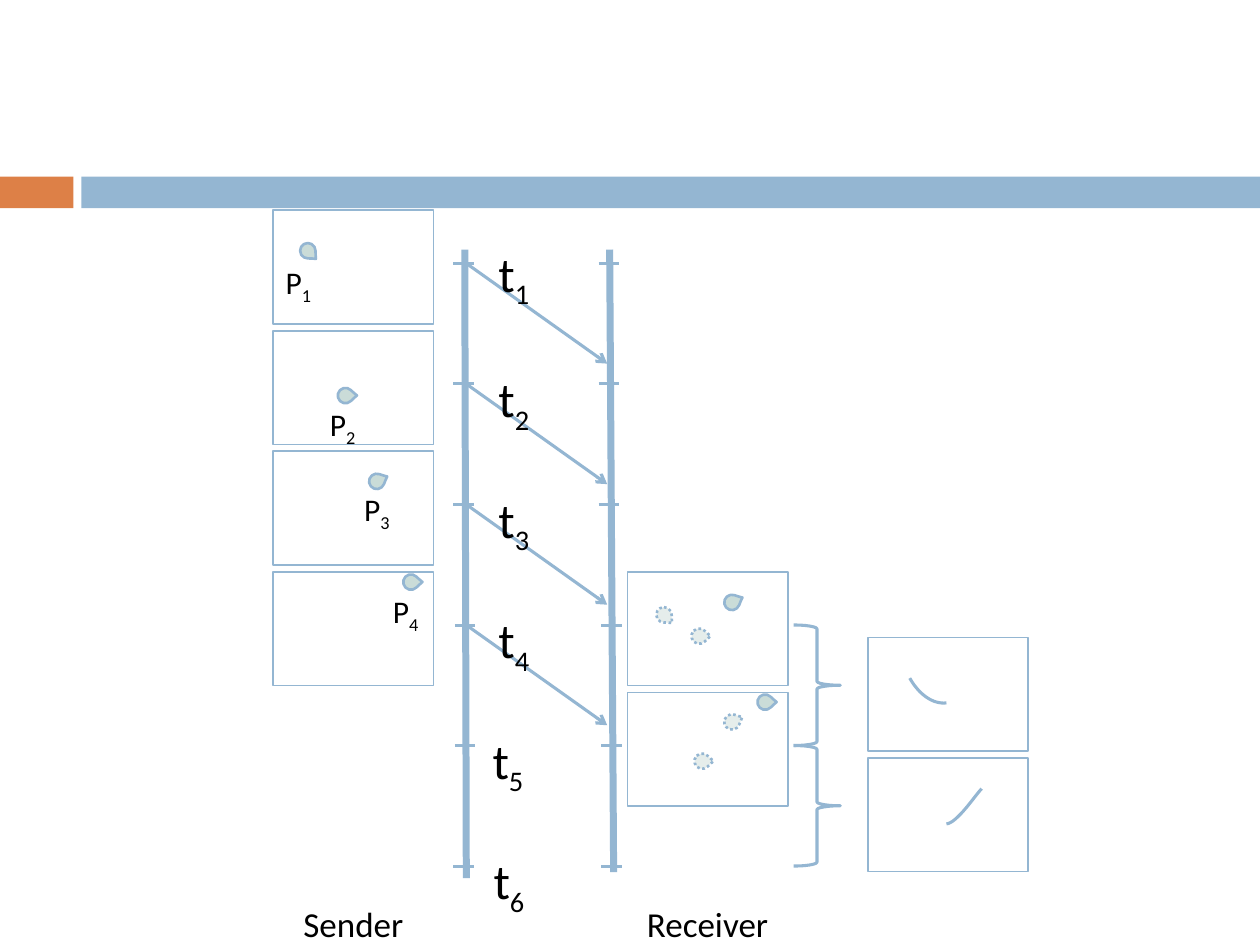
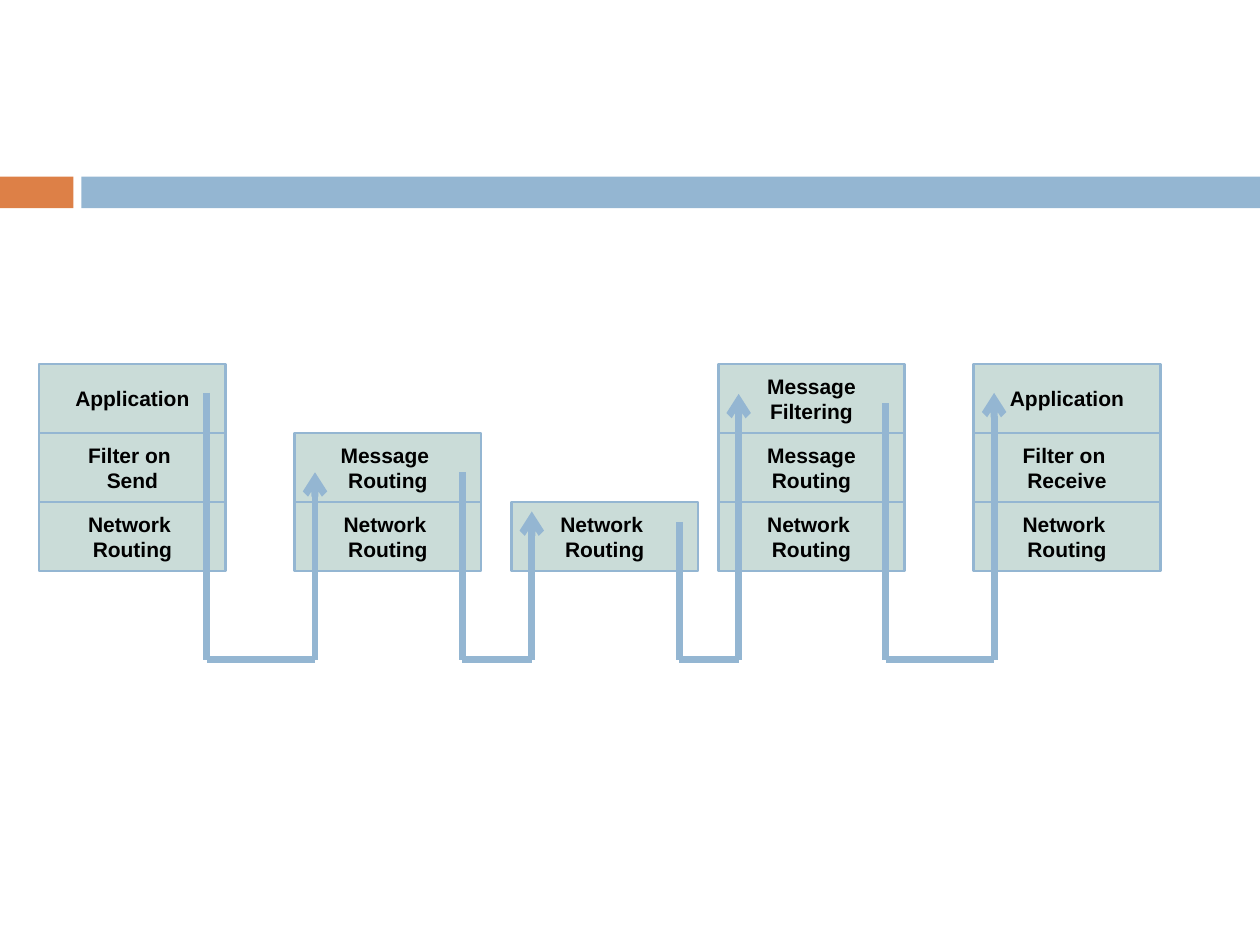
"""Build two slides on message timing and on routing layers."""
from itertools import pairwise
from typing import NamedTuple

from lxml.etree import SubElement
from pptx import Presentation
from pptx.dml.color import RGBColor
from pptx.enum.dml import MSO_LINE_DASH_STYLE as Dash
from pptx.enum.shapes import MSO_CONNECTOR as Connector, MSO_SHAPE as Preset
from pptx.enum.text import MSO_ANCHOR as Anchor, PP_ALIGN as Align
from pptx.oxml.ns import qn
from pptx.util import Cm, Pt

COLORS = {"accent": "DD8047", "blue": "94B6D2", "pale": "CADCD8", "text": "000000"}
ROW = 2.43
FIRST_TICK = 5.31
LAYER_TOP, LAYER_WIDTH, LAYER_HEIGHT = 7.34, 3.76, 1.39
FLOOR = 13.3


class Box(NamedTuple):
    left: float
    top: float
    width: float
    height: float


class Marker(NamedTuple):
    left: float
    top: float
    angle: float
    faded: bool = False


class Label(NamedTuple):
    letter: str
    index: int
    left: float
    top: float


class Timeline(NamedTuple):
    name: str
    name_left: float
    start: tuple[float, float]
    end: tuple[float, float]
    tick_lefts: tuple[float, ...]


class Stack(NamedTuple):
    left: float
    layers: tuple[str, ...]


class Hop(NamedTuple):
    start: float
    tip: float


TIMELINES = (
    Timeline("Sender", 5.64, (9.37, 5.03), (9.4, 17.7),
             (9.14, 9.14, 9.14, 9.17, 9.17, 9.14)),
    Timeline("Receiver", 12.78, (12.29, 5.03), (12.37, 17.58),
             (12.07, 12.07, 12.07, 12.12, 12.12, 12.12)),
)
SCREENS = (
    *((5.51, 4.24 + ROW * row) for row in range(4)),
    *((12.65, 4.24 + ROW * row) for row in (3, 4)),
    *((17.5, 12.85 + ROW * row) for row in range(2)),
)
MARKERS = (
    Marker(6.05, 4.9, 90), Marker(6.81, 7.82, 44.6),
    Marker(7.44, 9.55, 20.1), Marker(8.13, 11.58, 44.6),
    Marker(14.6, 11.99, 20.1), Marker(15.27, 14, 44.6),
    Marker(13.94, 12.67, 44.6, True), Marker(14.6, 14.4, 20.1, True),
    Marker(13.23, 12.24, 90, True), Marker(14, 15.19, 44.6, True),
)
POINT_LABELS = (
    Label("P", 1, 5.51, 5.18), Label("P", 2, 6.4, 8.05),
    Label("P", 3, 7.09, 9.75), Label("P", 4, 7.67, 11.81),
)
TIME_LABELS = (
    Label("t", 1, 9.8, 4.78), Label("t", 2, 9.8, 7.31), Label("t", 3, 9.8, 9.74),
    Label("t", 4, 9.8, 12.17), Label("t", 5, 9.68, 14.6), Label("t", 6, 9.7, 17.03),
)
TRAILS = (
    ((18.34, 13.67), (18.54, 14.02), (18.82, 14.2), (19.08, 14.17)),
    ((19.08, 16.61), (19.3, 16.59), (19.66, 16.03), (19.79, 15.9)),
)
NETWORK = "Network \nRouting"
STACKS = (
    Stack(0.79, ("Application", "Filter on \nSend", NETWORK)),
    Stack(5.94, ("Message \nRouting", NETWORK)),
    Stack(10.31, (NETWORK,)),
    Stack(14.48, ("Message\nFiltering", "Message\nRouting", NETWORK)),
    Stack(19.63, ("Application", "Filter on \nReceive", NETWORK)),
)
HOPS = (Hop(7.92, 9.52), Hop(9.52, 10.31), Hop(10.52, 7.94), Hop(8.13, 7.92))


def color(name: str) -> RGBColor:
    """Return a palette colour."""
    return RGBColor.from_string(COLORS[name])


def add_preset(slide, preset, box: Box, fill: str = "", line_width: float = 0):
    """Draw a preset shape with an optional fill and outline."""
    shape = slide.shapes.add_shape(preset, *map(Cm, box))
    shape.shadow.inherit = False
    if fill:
        shape.fill.solid()
        shape.fill.fore_color.rgb = color(fill)
    else:
        shape.fill.background()
    if line_width:
        shape.line.color.rgb = color("blue")
        shape.line.width = Pt(line_width)
    else:
        shape.line.fill.background()
    return shape


def add_line(slide, start: tuple[float, float], end: tuple[float, float],
             width: float = 1.75, arrow: bool = False) -> None:
    """Draw a straight line, with an arrowhead at its end if asked."""
    line = slide.shapes.add_connector(Connector.STRAIGHT, *map(Cm, (*start, *end)))
    line.line.color.rgb = color("blue")
    line.line.width = Pt(width)
    properties = line._element.spPr
    if arrow:
        SubElement(properties.find(qn("a:ln")), qn("a:tailEnd"), type="arrow")
    SubElement(properties, qn("a:effectLst"))


def style_paragraph(paragraph, font: str, size: float, bold: bool = False) -> None:
    """Set the font of a whole paragraph."""
    paragraph.font.name = font
    paragraph.font.size = Pt(size)
    paragraph.font.bold = bold
    paragraph.font.color.rgb = color("text")


def add_text(slide, box: Box, text: str, size: float, subscript: str = "",
             align=Align.LEFT) -> None:
    """Write one line of text with an optional subscript."""
    frame = slide.shapes.add_textbox(*map(Cm, box)).text_frame
    frame.word_wrap = True
    paragraph = frame.paragraphs[0]
    paragraph.alignment = align
    style_paragraph(paragraph, "Calibri", size)
    paragraph.add_run().text = text
    if subscript:
        index = paragraph.add_run()
        index.text = subscript
        index._r.get_or_add_rPr().set("baseline", "-25000")


def add_marker(slide, marker: Marker) -> None:
    """Draw a pointer position, dotted and translucent when faded."""
    box = Box(marker.left, marker.top, 0.31, 0.31)
    drop = add_preset(slide, Preset.TEAR, box, "pale", 1.5)
    drop.adjustments[0] = 1.06
    drop.rotation = marker.angle
    if marker.faded:
        drop.line.dash_style = Dash.ROUND_DOT
        fill = drop._element.spPr.find(qn("a:solidFill"))
        SubElement(fill[0], qn("a:alpha"), val="49000")


def add_trail(slide, controls: tuple[tuple[float, float], ...], steps: int = 16) -> None:
    """Draw a smooth trail from four Bézier control points."""
    points = []
    for step in range(steps + 1):
        t = step / steps
        weights = ((1 - t) ** 3, 3 * t * (1 - t) ** 2, 3 * t * t * (1 - t), t ** 3)
        points.append(tuple(Cm(sum(weight * value for weight, value in zip(weights, axis)))
                            for axis in zip(*controls)))
    builder = slide.shapes.build_freeform(*points[0])
    builder.add_line_segments(points[1:], close=False)
    trail = builder.convert_to_shape()
    trail.shadow.inherit = False
    trail.fill.background()
    trail.line.color.rgb = color("blue")
    trail.line.width = Pt(1.75)


def add_timeline(slide, timeline: Timeline) -> None:
    """Draw a named time axis with its ticks."""
    add_text(slide, Box(timeline.name_left, 18.06, 2.97, 1.12), timeline.name, 20,
             align=Align.CENTER)
    add_line(slide, timeline.start, timeline.end, 4)
    for row, left in enumerate(timeline.tick_lefts):
        tick = FIRST_TICK + ROW * row
        add_line(slide, (left, tick), (left + 0.41, tick))


def add_stack(slide, stack: Stack) -> None:
    """Draw the layers of one node, resting on the common base."""
    first = 3 - len(stack.layers)
    for level, text in enumerate(stack.layers, first):
        box = Box(stack.left, LAYER_TOP + LAYER_HEIGHT * level, LAYER_WIDTH, LAYER_HEIGHT)
        frame = add_preset(slide, Preset.RECTANGLE, box, "pale", 1.5).text_frame
        frame.vertical_anchor = Anchor.MIDDLE
        frame.text = text
        for paragraph in frame.paragraphs:
            paragraph.alignment = Align.CENTER
            style_paragraph(paragraph, "Arial", 12, True)


def add_hop(slide, down: float, up: float, hop: Hop) -> None:
    """Draw a path down from one node and up into the next."""
    add_line(slide, (down, hop.start), (down, FLOOR), 4)
    add_line(slide, (down, FLOOR), (up, FLOOR), 4)
    add_line(slide, (up, FLOOR), (up, hop.tip), 4, True)


def add_banded_slide(deck):
    """Add a blank slide with the shared two-colour band."""
    slide = deck.slides.add_slide(deck.slide_layouts[6])
    add_preset(slide, Preset.RECTANGLE, Box(0, 3.56, 1.48, 0.64), "accent")
    add_preset(slide, Preset.RECTANGLE, Box(1.64, 3.56, 23.76, 0.64), "blue")
    return slide


def build_timing(deck) -> None:
    """Build the sender and receiver timing diagram."""
    slide = add_banded_slide(deck)
    for timeline in TIMELINES:
        add_timeline(slide, timeline)
    for row in range(4):
        sent = FIRST_TICK + ROW * row
        add_line(slide, (9.4, sent), (12.24, sent + 2.02), arrow=True)
    for left, top in SCREENS:
        add_preset(slide, Preset.RECTANGLE, Box(left, top, 3.23, 2.29), line_width=1)
    for row in (3, 4):
        add_preset(slide, Preset.RIGHT_BRACE,
                   Box(16, FIRST_TICK + ROW * row, 0.94, ROW), line_width=1.75)
    for marker in MARKERS:
        add_marker(slide, marker)
    for trail in TRAILS:
        add_trail(slide, trail)
    for labels, size, width, height in ((POINT_LABELS, 18, 1.22, 1.02),
                                        (TIME_LABELS, 28, 1.55, 1.45)):
        for label in labels:
            add_text(slide, Box(label.left, label.top, width, height), label.letter,
                     size, str(label.index))


def build_routing(deck) -> None:
    """Build the layered routing diagram."""
    slide = add_banded_slide(deck)
    for stack in STACKS:
        add_stack(slide, stack)
    for (source, target), hop in zip(pairwise(STACKS), HOPS):
        add_hop(slide, source.left + 3.38, target.left + 0.41, hop)


def main() -> None:
    """Create and save the presentation."""
    deck = Presentation()
    deck.slide_width, deck.slide_height = Cm(25.4), Cm(19.05)
    build_timing(deck)
    build_routing(deck)
    deck.save("out.pptx")


if __name__ == "__main__":
    main()
